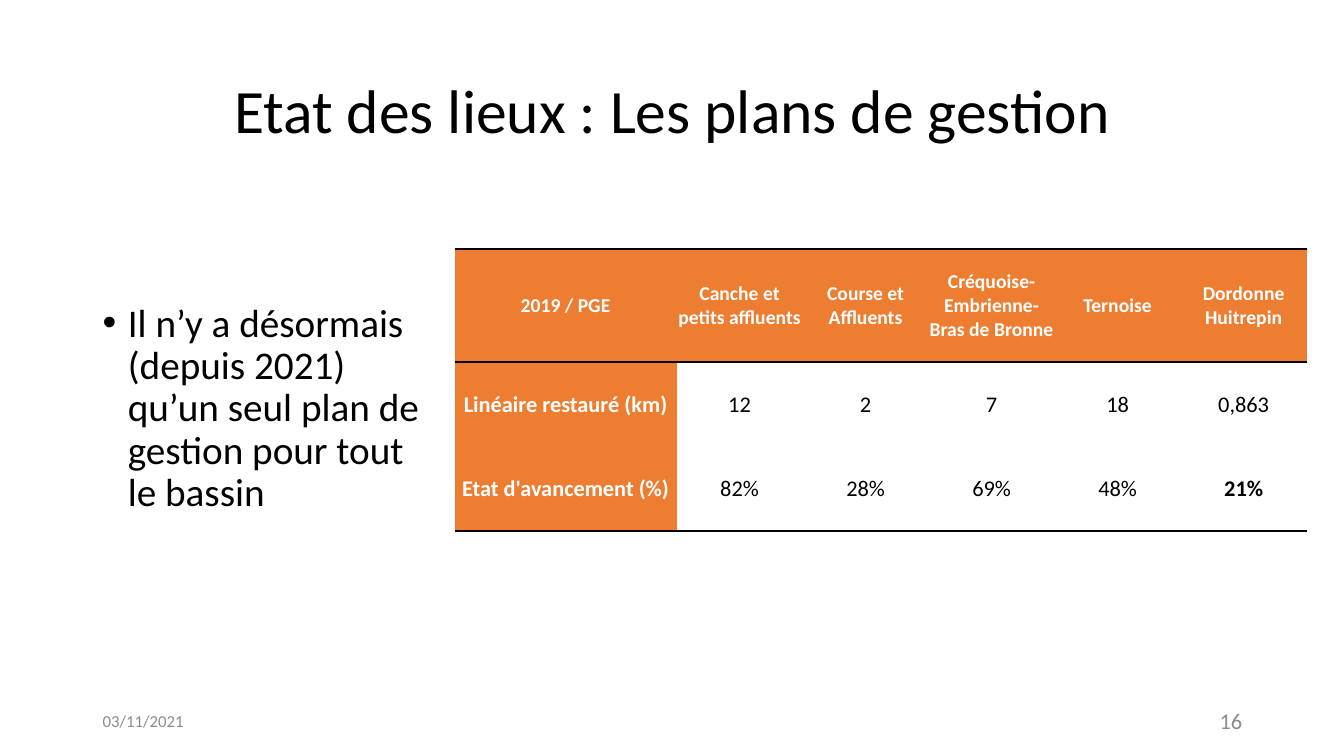
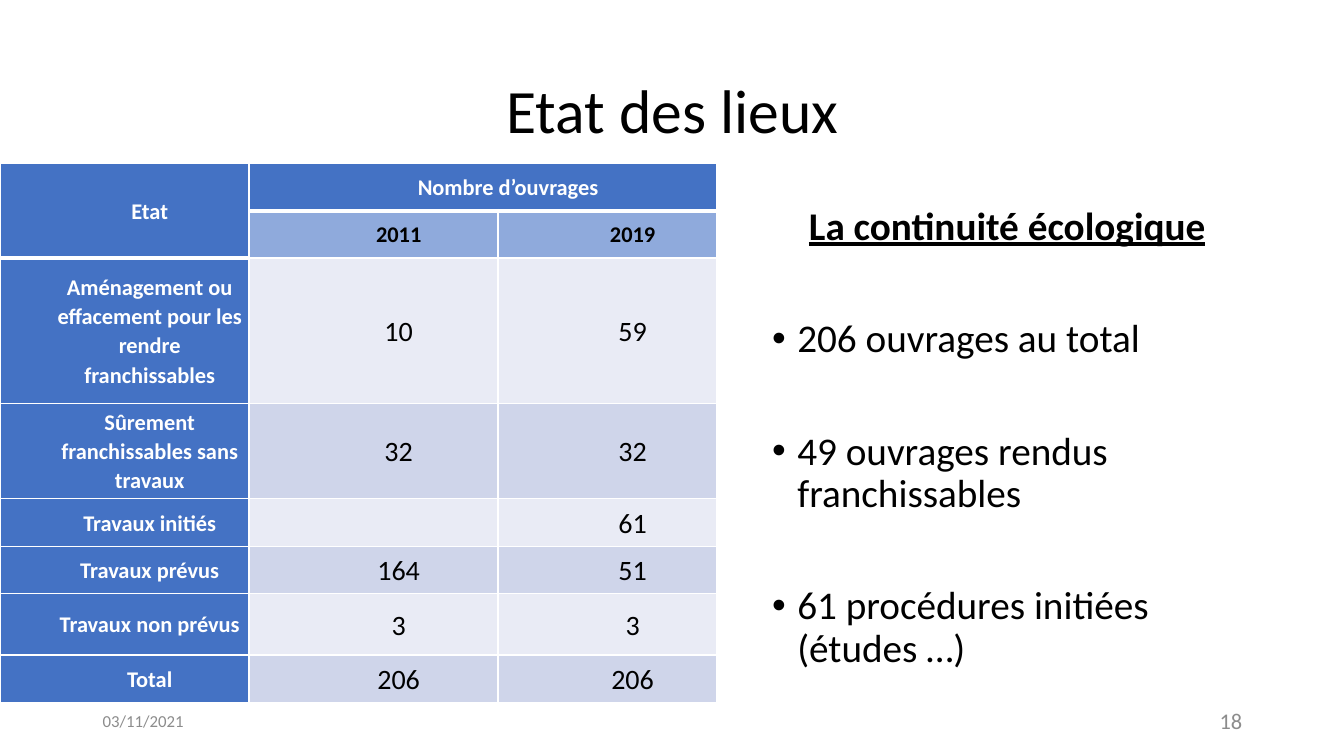
from lxml import etree
from pptx import Presentation
from pptx.dml.color import RGBColor
from pptx.enum.text import MSO_ANCHOR, PP_ALIGN
from pptx.oxml.ns import qn
from pptx.util import Inches, Pt

LEFT, CENTER, RIGHT = PP_ALIGN.LEFT, PP_ALIGN.CENTER, PP_ALIGN.RIGHT
TOP, MIDDLE = MSO_ANCHOR.TOP, MSO_ANCHOR.MIDDLE
TITLE_ONLY = 5
FONT = "Calibri"
DATE = "03/11/2021"
COLORS = {
    "text": "000000",
    "white": "FFFFFF",
    "footer": "8C8C8C",
    "orange": "ED7D31",
    "blue": "4472C4",
    "mid_blue": "8FAADC",
    "light_band": "E9EBF5",
    "dark_band": "CFD5EA",
}


def rgb(name):
    return RGBColor.from_string(COLORS[name])


class Deck:
    def __init__(self):
        self.prs = Presentation()
        self.prs.slide_width = Inches(13.33)
        self.prs.slide_height = Inches(7.5)
        self.slide = None

    def new_slide(self, title, number):
        layout = self.prs.slide_layouts[TITLE_ONLY]
        self.slide = self.prs.slides.add_slide(layout)
        holder = self.slide.shapes.title
        holder.left, holder.top = Inches(0.92), Inches(0.4)
        holder.width, holder.height = Inches(11.5), Inches(1.45)
        frame = holder.text_frame
        frame.word_wrap = True
        frame.vertical_anchor = MIDDLE
        self.add_text(frame.paragraphs[0], title, 44, align=CENTER, spacing=0.9)
        self.footer(0.92, DATE, 12, LEFT)
        self.footer(9.42, str(number), 16, RIGHT)

    def add_text(self, paragraph, text, size, color="text", bold=False,
                 underline=False, align=LEFT, spacing=1.0):
        paragraph.alignment = align
        paragraph.line_spacing = spacing
        if not text:
            return
        run = paragraph.add_run()
        run.text = text
        run.font.name = FONT
        run.font.size = Pt(size)
        run.font.bold = bold
        run.font.underline = underline
        run.font.color.rgb = rgb(color)

    def text_frame(self, left, top, width, height, anchor=TOP):
        box = self.slide.shapes.add_textbox(
            Inches(left), Inches(top), Inches(width), Inches(height))
        box.text_frame.word_wrap = True
        box.text_frame.vertical_anchor = anchor
        return box.text_frame

    def footer(self, left, text, size, align):
        frame = self.text_frame(left, 6.95, 3, 0.4, MIDDLE)
        self.add_text(frame.paragraphs[0], text, size, "footer", align=align)

    def body(self, left, top, width, height, points, heading=None):
        """Bulleted text, with an optional underlined heading above it."""
        frame = self.text_frame(left, top, width, height)
        paragraph = frame.paragraphs[0]
        if heading:
            self.add_text(paragraph, heading, 28, bold=True, underline=True,
                          align=CENTER, spacing=0.9)
        for index, point in enumerate(points):
            if heading or index:
                paragraph = frame.add_paragraph()
                paragraph.space_before = Pt(50)
            self.bullet(paragraph)
            self.add_text(paragraph, point, 28, spacing=0.9)

    def bullet(self, paragraph):
        props = paragraph._p.get_or_add_pPr()
        props.set("marL", str(Inches(0.25)))
        props.set("indent", str(-Inches(0.25)))
        etree.SubElement(props, qn("a:buFont")).set("typeface", "Arial")
        etree.SubElement(props, qn("a:buChar")).set("char", "•")

    def table(self, left, top, widths, heights):
        grid = self.slide.shapes.add_table(
            len(heights), len(widths), Inches(left), Inches(top),
            Inches(sum(widths)), Inches(sum(heights))).table
        grid.first_row = grid.horz_banding = False
        for column, width in zip(grid.columns, widths):
            column.width = Inches(width)
        for row, height in zip(grid.rows, heights):
            row.height = Inches(height)
        return grid

    def cell(self, cell, text, fill, margins, borders, indent=0, **style):
        """Margins are left, top, right, bottom; borders map a side to (color, points)."""
        (cell.margin_left, cell.margin_top,
         cell.margin_right, cell.margin_bottom) = map(Inches, margins)
        cell.vertical_anchor = MIDDLE
        props = cell._tc.get_or_add_tcPr()
        for side in "LRTB":
            color, points = borders.get(side, (None, 0))
            line = etree.SubElement(props, qn(f"a:ln{side}"), w=str(Pt(points)))
            if color:
                solid = etree.SubElement(line, qn("a:solidFill"))
                etree.SubElement(solid, qn("a:srgbClr"), val=COLORS[color])
            else:
                etree.SubElement(line, qn("a:noFill"))
        cell.fill.solid()
        cell.fill.fore_color.rgb = rgb(fill)
        paragraph = cell.text_frame.paragraphs[0]
        if indent:
            paragraph._p.get_or_add_pPr().set("marL", str(Inches(indent)))
        self.add_text(paragraph, text, align=CENTER, **style)


def management_plans(deck):
    deck.new_slide("Etat des lieux : Les plans de gestion", 16)
    rows = [
        ["2019 / PGE", "Canche et petits affluents", "Course et Affluents",
         "Créquoise-Embrienne-Bras de Bronne", "Ternoise", "Dordonne Huitrepin"],
        ["Linéaire restauré (km)", "12", "2", "7", "18", "0,863"],
        ["Etat d'avancement (%)", "82%", "28%", "69%", "48%", "21%"],
    ]
    rule = ("text", 2)
    row_borders = [{"T": rule, "B": rule}, {"T": rule}, {"B": rule}]
    grid = deck.table(4.51, 2.47, [2.2] + [1.25] * 5, [1.12, 0.84, 0.84])
    for r, row in enumerate(rows):
        for c, text in enumerate(row):
            label = r == 0 or c == 0
            deck.cell(grid.cell(r, c), text, "orange" if label else "white",
                      (0.01, 0.01, 0.01, 0), row_borders[r],
                      size=16 if r else 14,
                      color="white" if label else "text",
                      bold=label or text == "21%")
    deck.body(0.92, 2.96, 3.34, 3.79, [
        "Il n’y a désormais (depuis 2021) qu’un seul plan de gestion pour tout le bassin"])


def ecological_continuity(deck):
    deck.new_slide("Etat des lieux", 18)
    deck.body(7.56, 2, 4.86, 4.76, [
        "206 ouvrages au total",
        "49 ouvrages rendus franchissables",
        "61 procédures initiées (études …)",
    ], heading="La continuité écologique")
    rows = [
        ["Etat", "Nombre d’ouvrages", ""],
        ["", "2011", "2019"],
        ["Aménagement ou effacement pour les rendre franchissables", "10", "59"],
        ["Sûrement franchissables sans travaux", "32", "32"],
        ["Travaux initiés", "", "61"],
        ["Travaux prévus", "164", "51"],
        ["Travaux non prévus", "3", "3"],
        ["Total", "206", "206"],
    ]
    grid = deck.table(0, 1.62, [2.47, 2.47, 2.17],
                      [0.47, 0.47, 1.44, 0.95, 0.47, 0.47, 0.61, 0.47])
    grid.cell(0, 0).merge(grid.cell(1, 0))
    grid.cell(0, 1).merge(grid.cell(0, 2))
    thin, thick = ("white", 1), ("white", 3)
    for r, row in enumerate(rows):
        for c, text in enumerate(row):
            label = r == 0 or c == 0
            if label:
                fill = "blue"
            elif r == 1:
                fill = "mid_blue"
            else:
                fill = "dark_band" if r % 2 else "light_band"
            borders = dict.fromkeys("LRTB", thin)
            if r == 0 or (r, c) == (1, 0):
                borders["B"] = thick
            if (r == 1 and c > 0) or (r, c) == (2, 0):
                borders["T"] = thick
            deck.cell(grid.cell(r, c), text, fill, (0.07, 0, 0.07, 0), borders,
                      indent=0.5, size=16 if label or r == 1 else 20,
                      color="white" if label else "text",
                      bold=label or r == 1, spacing=1.07)


def main():
    deck = Deck()
    management_plans(deck)
    ecological_continuity(deck)
    deck.prs.save("out.pptx")


if __name__ == "__main__":
    main()
